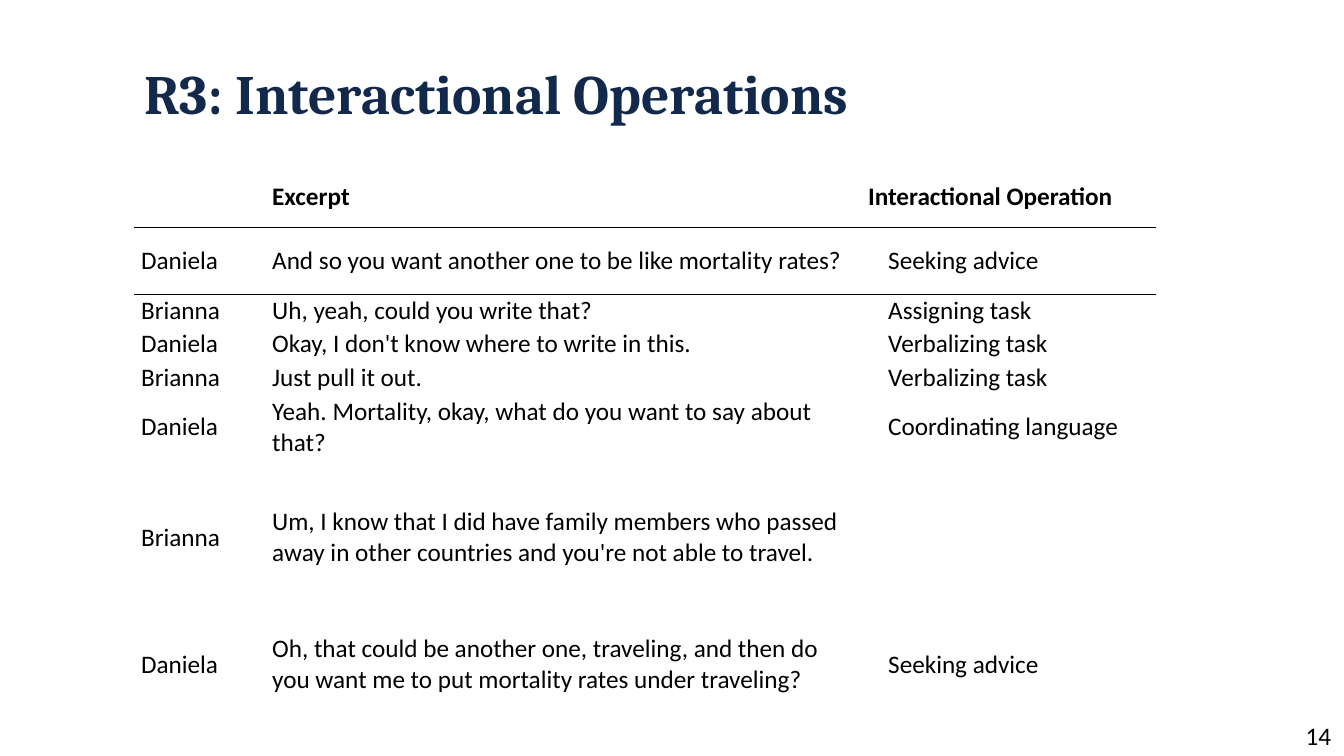
from lxml.etree import SubElement
from pptx import Presentation
from pptx.dml.color import RGBColor
from pptx.enum.text import MSO_ANCHOR, MSO_AUTO_SIZE, PP_ALIGN
from pptx.oxml.ns import qn
from pptx.util import Inches, Pt

BLACK = "000000"
NAVY = "13294B"
COLUMNS = [1.3, 5.91, 2.93]
ROWS = [0.61, 0.66, 0.33, 0.33, 0.33, 0.66, 1.53, 0.99]
RULED_ROWS = 2
DIALOGUE = [
    ("", "Excerpt", "Interactional Operation"),
    ("Daniela", "And so you want another one to be like mortality rates?", "Seeking advice"),
    ("Brianna", "Uh, yeah, could you write that?", "Assigning task"),
    ("Daniela", "Okay, I don't know where to write in this.", "Verbalizing task"),
    ("Brianna", "Just pull it out.", "Verbalizing task"),
    ("Daniela", "Yeah. Mortality, okay, what do you want to say about that?",
     "Coordinating language"),
    ("Brianna", "Um, I know that I did have family members who passed away in other "
     "countries and you're not able to travel.", ""),
    ("Daniela", "Oh, that could be another one, traveling, and then do you want me to "
     "put mortality rates under traveling?", "Seeking advice"),
]


def rgb(value):
    return RGBColor.from_string(value)


def style_runs(p, size, name, color, bold=False):
    for r in p.runs:
        r.font.size = Pt(size)
        r.font.name = name
        r.font.color.rgb = rgb(color)
        r.font.bold = bold


def place(shape, x, y, w, h):
    shape.left, shape.top = Inches(x), Inches(y)
    shape.width, shape.height = Inches(w), Inches(h)


def set_border(cell, side, color=None):
    ln = SubElement(cell._tc.get_or_add_tcPr(), qn(f"a:{side}"), w=str(Pt(1)))
    if color:
        fill = SubElement(ln, qn("a:solidFill"))
        SubElement(fill, qn("a:srgbClr"), val=color)
    else:
        SubElement(ln, qn("a:noFill"))


def add_title(s, text, x, y, w, h):
    title = s.shapes.title
    place(title, x, y, w, h)
    tf = title.text_frame
    tf.text = text
    tf.word_wrap = True
    tf.auto_size = MSO_AUTO_SIZE.NONE
    tf.vertical_anchor = MSO_ANCHOR.MIDDLE
    p = tf.paragraphs[0]
    p.alignment = PP_ALIGN.LEFT
    p.line_spacing = 0.9
    style_runs(p, 39.6, "Cambria", NAVY, True)


def fill_cell(cell, text, header, indented, ruled_above, ruled_below):
    cell.margin_left = cell.margin_right = Inches(0.07)
    cell.margin_top = cell.margin_bottom = 0
    cell.vertical_anchor = MSO_ANCHOR.MIDDLE
    cell.text = text
    p = cell.text_frame.paragraphs[0]
    if indented:
        p._p.get_or_add_pPr().set("marL", str(Inches(0.2)))
    p.font.size = Pt(18)
    style_runs(p, 18, "Calibri", BLACK, header)
    set_border(cell, "lnL")
    set_border(cell, "lnR")
    set_border(cell, "lnT", BLACK if ruled_above else None)
    set_border(cell, "lnB", BLACK if ruled_below else None)
    cell.fill.background()


def add_dialogue_table(s, x, y, w, h):
    frame = s.shapes.add_table(len(ROWS), len(COLUMNS),
                               Inches(x), Inches(y), Inches(w), Inches(h))
    table = frame.table
    table.first_row = table.horz_banding = False
    for column, width in zip(table.columns, COLUMNS):
        column.width = Inches(width)
    for i, (row, height, texts) in enumerate(zip(table.rows, ROWS, DIALOGUE)):
        row.height = Inches(height)
        for j, text in enumerate(texts):
            fill_cell(table.cell(i, j), text, i == 0, i > 0 and j == 2,
                      0 < i <= RULED_ROWS, i < RULED_ROWS)


def add_page_number(s, text, x, y, w, h):
    tf = s.shapes.add_textbox(Inches(x), Inches(y), Inches(w), Inches(h)).text_frame
    tf.word_wrap = True
    tf.auto_size = MSO_AUTO_SIZE.SHAPE_TO_FIT_TEXT
    tf.text = text
    style_runs(tf.paragraphs[0], 18, "Calibri", BLACK)


def main():
    prs = Presentation()
    prs.slide_width, prs.slide_height = Inches(13.33), Inches(7.5)
    s = prs.slides.add_slide(prs.slide_layouts[5])
    add_page_number(s, "14", 12.85, 7.1, 0.49, 0.4)
    add_dialogue_table(s, 1.33, 1.65, sum(COLUMNS), sum(ROWS))
    add_title(s, "R3: Interactional Operations", 1.33, 0.71, 9.61, 0.5)
    prs.save("out.pptx")


if __name__ == "__main__":
    main()
